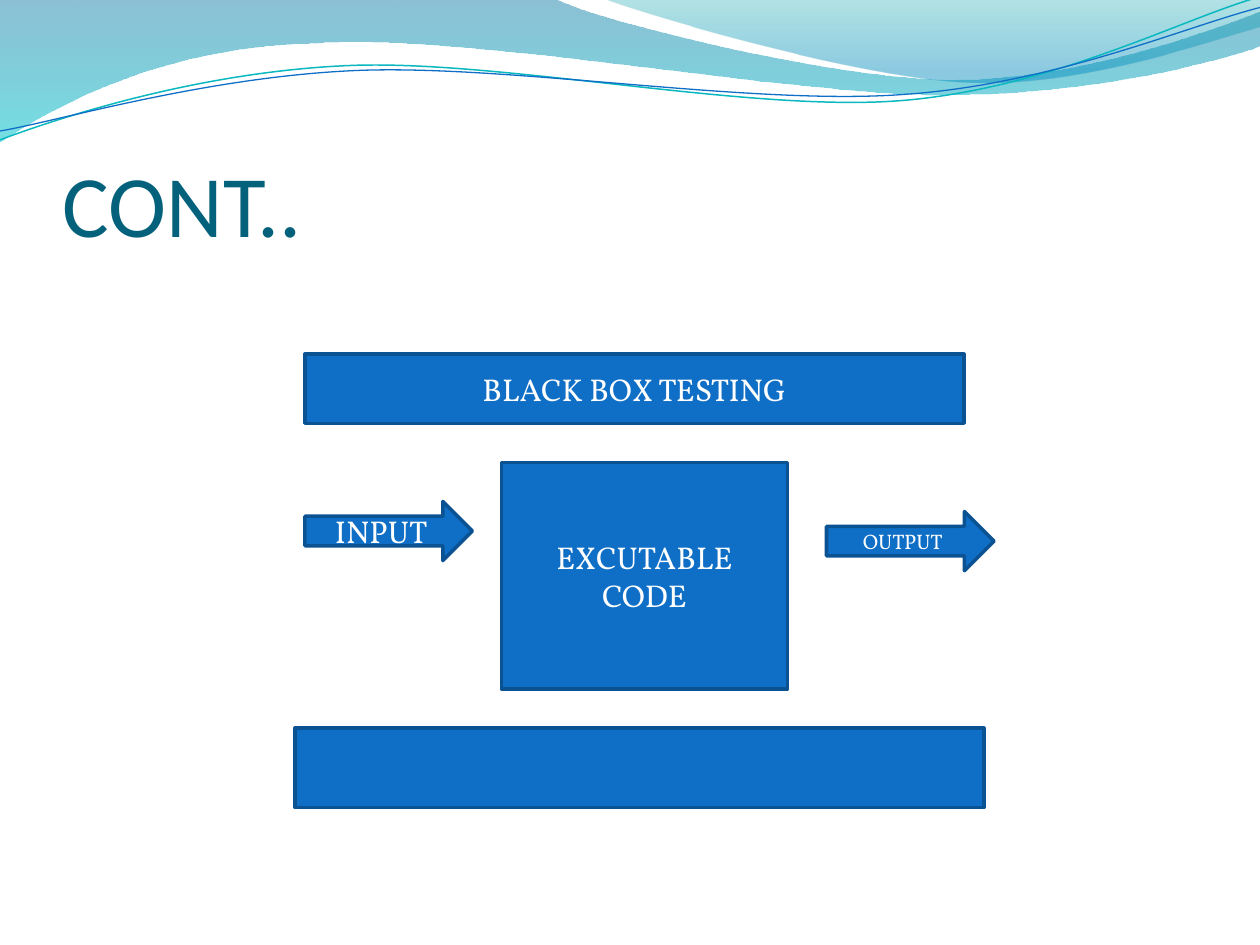
from dataclasses import dataclass
from math import cos, radians, sin

from lxml.etree import SubElement
from pptx import Presentation
from pptx.dml.color import RGBColor
from pptx.enum.shapes import MSO_SHAPE
from pptx.enum.text import MSO_ANCHOR, PP_ALIGN
from pptx.oxml.ns import qn
from pptx.shapes.autoshape import Shape
from pptx.slide import Slide
from pptx.util import Inches, Pt

BLUE, DARK_BLUE, TEAL = "0F6FC6", "0B5292", "0AB8BF"
LINE_TILT = -2.7

Point = tuple[float, float]


@dataclass
class Stop:
    position: float
    color: str
    opacity: int


@dataclass
class Wave:
    """A filled band or a line: each segment holds one point (straight) or three (Bézier)."""
    start: Point
    segments: list[tuple[Point, ...]]
    gradient: tuple[Stop, Stop] | None = None
    line: str = ""
    width: float = 0
    tilt: float = 0
    center: Point = (0, 0)


@dataclass
class Block:
    left: float
    top: float
    width: float
    height: float
    text: str = ""
    size: int = 18
    kind: MSO_SHAPE = MSO_SHAPE.RECTANGLE


WAVES = [
    Wave((0, 0), [
        ((4.4, -0.01),),
        ((4.76, 0.17), (6.64, 0.63), (7.58, 0.63)),
        ((8.53, 0.63), (9.58, 0.26), (10, 0.09)),
        ((10.01, 0.36),),
        ((9.83, 0.44), (8.7, 0.76), (7.46, 0.75)),
        ((6.22, 0.75), (3.82, 0.28), (2.57, 0.34)),
        ((1.29, 0.36), (0.46, 0.83), (-0.01, 1.13)),
        ((0, 0),),
    ], gradient=(Stop(0, "0074A1", 45), Stop(1, "00C6CF", 55))),
    Wave((4.79, -0.01), [
        ((5.09, 0.11), (6.82, 0.62), (7.69, 0.65)),
        ((8.56, 0.69), (9.61, 0.32), (10, 0.21)),
        ((10, 0),),
        ((4.79, -0.01),),
    ], gradient=(Stop(0, "00A1A9", 30), Stop(0.8, "008BBF", 45))),
    Wave((0, 1.11), [
        ((0.48, 0.93), (1.58, 0.57), (2.77, 0.52)),
        ((3.95, 0.47), (5.93, 0.89), (7.13, 0.8)),
        ((8.33, 0.71), (9.38, 0.15), (9.98, -0.02)),
    ], line=TEAL, width=0.85, tilt=LINE_TILT, center=(4.99, 0.58)),
    Wave((0, 1.04), [
        ((0.47, 0.96), (1.64, 0.61), (2.83, 0.56)),
        ((4.03, 0.51), (5.97, 0.84), (7.17, 0.75)),
        ((8.36, 0.67), (9.41, 0.21), (10, 0.06)),
    ], line=BLUE, width=0.75, tilt=LINE_TILT, center=(5, 0.59)),
]

ARROW = MSO_SHAPE.RIGHT_ARROW
BLOCKS = [
    Block(2.42, 2.81, 5.23, 0.55, "BLACK BOX TESTING"),
    Block(2.42, 3.98, 1.33, 0.47, "INPUT", kind=ARROW),
    Block(6.56, 4.06, 1.33, 0.47, "OUTPUT", size=12, kind=ARROW),
    Block(3.98, 3.67, 2.27, 1.8, "EXCUTABLE CODE"),
    Block(2.34, 5.78, 5.47, 0.63),
]


def rgb(color: str) -> RGBColor:
    return RGBColor.from_string(color)


def untilt(point: Point, wave: Wave) -> Point:
    """Where a point lies before its wave is rotated about its center."""
    angle = radians(-wave.tilt)
    cx, cy = wave.center
    dx, dy = point[0] - cx, point[1] - cy
    return (Inches(cx + dx * cos(angle) - dy * sin(angle)),
            Inches(cy + dx * sin(angle) + dy * cos(angle)))


def bend(sp: Shape, segments: list[tuple[Point, ...]]) -> None:
    """Turn the straight steps of each three-point segment into one Bézier curve."""
    steps = iter(list(sp._element.iter(qn("a:lnTo"))))
    for segment in segments:
        first, *others = [next(steps) for _ in segment]
        if others:
            curve = SubElement(first.getparent(), qn("a:cubicBezTo"))
            first.addprevious(curve)
            for step in (first, *others):
                curve.append(step[0])
                step.getparent().remove(step)


def set_gradient(sp: Shape, stops: tuple[Stop, Stop]) -> None:
    """Fill from top to bottom with partly transparent colours."""
    sp.fill.gradient()
    sp.fill.gradient_angle = 270
    for target, stop in zip(sp.fill.gradient_stops, stops):
        target.position = stop.position
        target.color.rgb = rgb(stop.color)
    for color, stop in zip(sp._element.spPr.iter(qn("a:srgbClr")), stops):
        SubElement(color, qn("a:alpha")).set("val", str(stop.opacity * 1000))


def add_wave(s: Slide, wave: Wave) -> None:
    builder = s.shapes.build_freeform(*untilt(wave.start, wave))
    points = [untilt(point, wave) for segment in wave.segments for point in segment]
    builder.add_line_segments(points, close=wave.gradient is not None)
    sp = builder.convert_to_shape()
    bend(sp, wave.segments)
    sp.rotation = wave.tilt
    sp.shadow.inherit = False
    if wave.gradient:
        set_gradient(sp, wave.gradient)
        sp.line.fill.background()
    else:
        sp.fill.background()
        sp.line.color.rgb = rgb(wave.line)
        sp.line.width = Pt(wave.width)


def add_title(s: Slide, text: str) -> None:
    tf = s.shapes.add_textbox(Inches(0.5), Inches(0.77), Inches(9), Inches(1.25)).text_frame
    tf.word_wrap = True
    tf.vertical_anchor = MSO_ANCHOR.BOTTOM
    tf.margin_left = tf.margin_right = tf.margin_bottom = 0
    p = tf.paragraphs[0]
    p.text = text
    p.font.name, p.font.size = "Calibri", Pt(50)
    p.font.color.rgb = rgb("04617B")


def add_block(s: Slide, block: Block) -> None:
    sp = s.shapes.add_shape(block.kind, Inches(block.left), Inches(block.top),
                            Inches(block.width), Inches(block.height))
    sp.shadow.inherit = False
    sp.fill.solid()
    sp.fill.fore_color.rgb = rgb(BLUE)
    sp.line.color.rgb = rgb(DARK_BLUE)
    sp.line.width = Pt(2)
    if block.text:
        tf = sp.text_frame
        tf.vertical_anchor = MSO_ANCHOR.MIDDLE
        p = tf.paragraphs[0]
        p.text = block.text
        p.alignment = PP_ALIGN.CENTER
        p.font.name, p.font.size = "Vollkorn", Pt(block.size)
        p.font.color.rgb = rgb("FFFFFF")


def main() -> None:
    prs = Presentation()
    prs.slide_width, prs.slide_height = Inches(10), Inches(7.5)
    s = prs.slides.add_slide(prs.slide_layouts[6])
    for wave in WAVES:
        add_wave(s, wave)
    add_title(s, "CONT..")
    for block in BLOCKS:
        add_block(s, block)
    prs.save("out.pptx")


if __name__ == "__main__":
    main()
